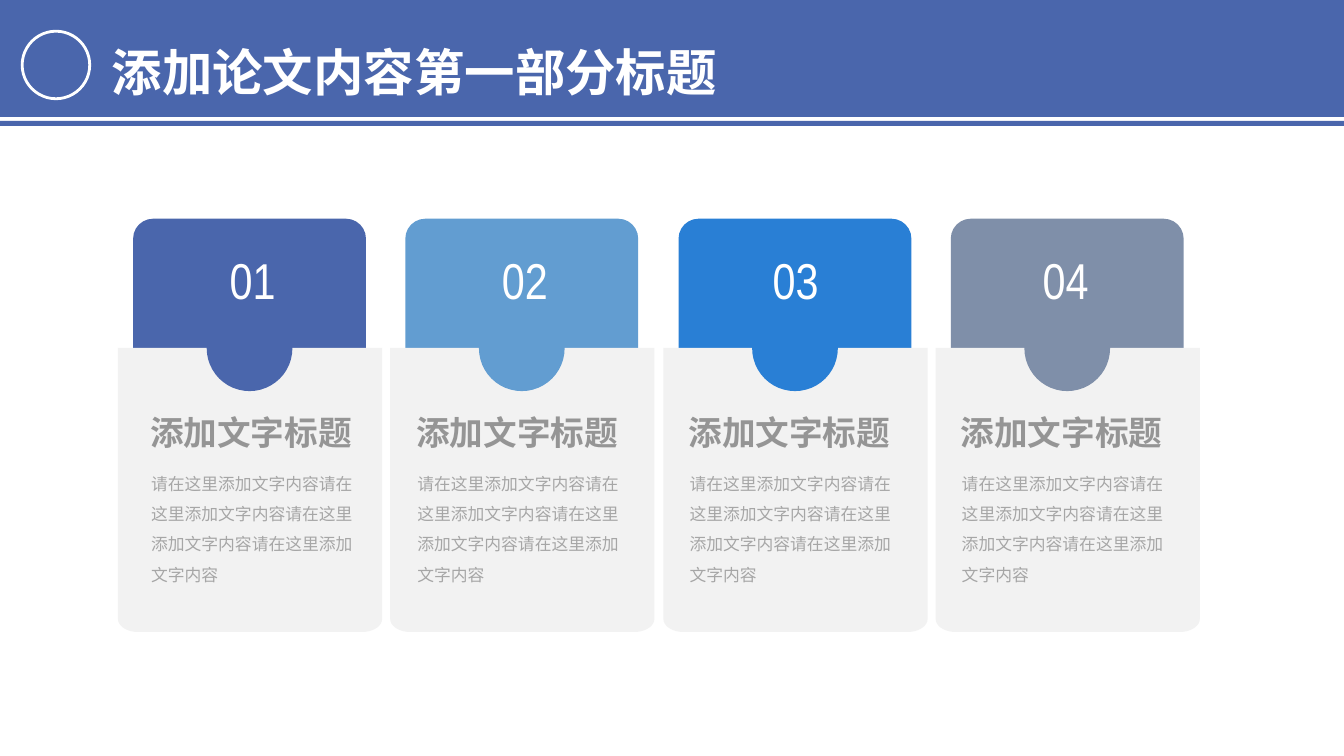
from math import cos, sin, radians

from lxml.etree import SubElement
from pptx import Presentation
from pptx.dml.color import RGBColor
from pptx.enum.shapes import MSO_SHAPE as SHAPE
from pptx.enum.text import MSO_ANCHOR as ANCHOR, MSO_AUTO_SIZE as AUTO, PP_ALIGN as ALIGN
from pptx.oxml.ns import qn
from pptx.util import Pt

PX = 9144  # 100 px to the inch
COLORS = {
    "header": "4A66AC", "panel": "F2F2F2", "white": "FFFFFF",
    "title": "959595", "body": "A6A6A6",
}
CJK = "Noto Sans CJK SC"
BODY = "请在这里添加文字内容" * 4

prs = Presentation()
prs.slide_width, prs.slide_height = 1333 * PX, 750 * PX
s = prs.slides.add_slide(prs.slide_layouts[6])


def add_filled(kind, x, y, w, h, color):
    sp = s.shapes.add_shape(kind, x * PX, y * PX, w * PX, h * PX)
    sp.shadow.inherit = False
    sp.fill.solid()
    sp.fill.fore_color.rgb = RGBColor.from_string(color)
    sp.line.fill.background()
    return sp


def add_text(text, x, y, w, h, size, color, font=CJK, bold=False, spacing=None):
    """Add a one-paragraph text box and return its text frame."""
    tf = s.shapes.add_textbox(x * PX, y * PX, w * PX, h * PX).text_frame
    tf.word_wrap = True
    p = tf.paragraphs[0]
    p.text = text
    p.line_spacing = spacing
    p.font.name = font
    p.font.size = Pt(size)
    p.font.bold = bold
    p.font.color.rgb = RGBColor.from_string(COLORS[color])
    SubElement(p.font._element, qn("a:ea"), typeface=font)
    return tf


# Header
add_filled(SHAPE.RECTANGLE, 0, 0, 1333, 116, COLORS["header"])
add_filled(SHAPE.RECTANGLE, 0, 120, 1333, 5, COLORS["header"])
ring = add_filled(SHAPE.OVAL, 22, 31, 67, 67, COLORS["header"])
ring.line.color.rgb = RGBColor.from_string(COLORS["white"])
ring.line.width = Pt(2)
tf = add_text("添加论文内容第一部分标题", 101, 6, 624, 101, 36, "white", bold=True, spacing=1.5)
tf.auto_size = AUTO.SHAPE_TO_FIT_TEXT

# Cards: colour, left and width of the number box, left of the title
cards = [
    ("4A66AC", 191, 119, 139),
    ("629DD1", 457, 127, 403),
    ("297FD5", 720, 138, 673),
    ("7F8FA9", 995, 124, 943),
]
PANEL_W, PANEL_TOP, PANEL_BOTTOM = 262, 345, 627
CORNER_W, CORNER_H = 20, 13

for i, (color, number_x, number_w, title_x) in enumerate(cards):
    left = 117 + round(270.4 * i)
    right = left + PANEL_W

    tab = add_filled(SHAPE.ROUNDED_RECTANGLE, left + 15, 217, 231, 213, color)
    tab.adjustments[0] = 0.093

    # Panel with square top corners and elliptical bottom corners
    points = [(right, PANEL_TOP)]
    for angle in range(0, 181, 10):
        center_x = right - CORNER_W if angle <= 90 else left + CORNER_W
        points.append((center_x + CORNER_W * cos(radians(angle)),
                       PANEL_BOTTOM - CORNER_H + CORNER_H * sin(radians(angle))))
        if angle == 90:
            points.append((left + CORNER_W, PANEL_BOTTOM))
    outline = s.shapes.build_freeform(left * PX, PANEL_TOP * PX)
    outline.add_line_segments([(round(x * PX), round(y * PX)) for x, y in points])
    panel = outline.convert_to_shape()
    panel.shadow.inherit = False
    panel.fill.solid()
    panel.fill.fore_color.rgb = RGBColor.from_string(COLORS["panel"])
    panel.line.fill.background()

    add_filled(SHAPE.OVAL, left + 88, 303, 85, 85, color)

    tf = add_text(f"{i + 1:02}", number_x, 243, number_w, 88, 36, "white", "Arial Narrow")
    tf.margin_left = tf.margin_right = 7 * PX
    tf.margin_top = tf.margin_bottom = 4 * PX
    tf.auto_size = AUTO.SHAPE_TO_FIT_TEXT
    tf.paragraphs[0].alignment = ALIGN.CENTER

    add_text(BODY, title_x + 1, 455, 221, 87, 12, "body", spacing=1.5)
    tf = add_text("添加文字标题", title_x, 400, 233, 58, 24, "title", bold=True)
    tf.vertical_anchor = ANCHOR.MIDDLE

prs.save("out.pptx")
